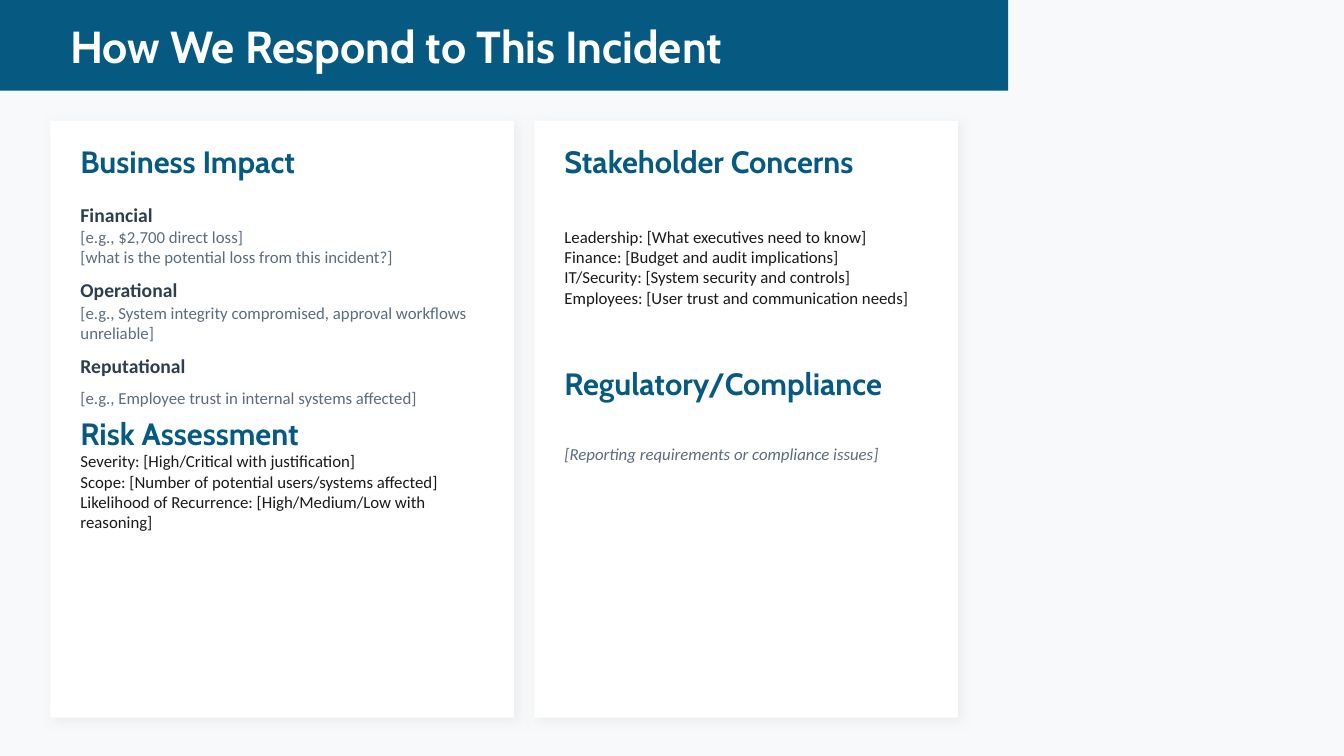
from lxml.etree import SubElement
from pptx import Presentation
from pptx.dml.color import RGBColor
from pptx.enum.shapes import MSO_SHAPE as Shape
from pptx.enum.text import MSO_ANCHOR as Anchor
from pptx.oxml.ns import qn
from pptx.util import Inches, Pt

TITLE = {"size": 32, "name": "Cabin", "bold": True, "color": "FFFFFF"}
HEADING = {"size": 22, "name": "Cabin", "bold": True, "color": "065A82"}
LABEL = {"size": 14, "name": "Calibri", "bold": True, "color": "2C3E50"}
HINT = {"size": 12, "name": "Calibri", "color": "5A6C7D"}
NOTE = HINT | {"italic": True}
BODY = HINT | {"color": "1A1A1A"}

CARD_TOP, CARD_HEIGHT, PADDING = 1.2, 5.92, 0.2
IMPACT_STEP = 0.75

IMPACTS = [
    ("Financial", ["[e.g., $2,700 direct loss]",
                   "[what is the potential loss from this incident?]"]),
    ("Operational", ["[e.g., System integrity compromised, approval workflows unreliable]"]),
    ("Reputational", ["[e.g., Employee trust in internal systems affected]"]),
]
RISKS = [
    "Severity: [High/Critical with justification]",
    "Scope: [Number of potential users/systems affected]",
    "Likelihood of Recurrence: [High/Medium/Low with reasoning]",
]
CONCERNS = [
    "Leadership: [What executives need to know]",
    "Finance: [Budget and audit implications]",
    "IT/Security: [System security and controls]",
    "Employees: [User trust and communication needs]",
]


def rgb(color):
    return RGBColor.from_string(color)


def add_panel(slide, left, top, width, height, color):
    panel = slide.shapes.add_shape(
        Shape.RECTANGLE, *map(Inches, (left, top, width, height)))
    panel.fill.solid()
    panel.fill.fore_color.rgb = rgb(color)
    panel.line.fill.background()
    panel.shadow.inherit = False
    return panel


def add_soft_shadow(panel):
    effects = panel._element.spPr.find(qn("a:effectLst"))
    shadow = SubElement(effects, qn("a:outerShdw"), blurRad=str(Pt(8)),
                        dist=str(Pt(3)), dir=str(45 * 60000),
                        algn="bl", rotWithShape="0")
    tint = SubElement(shadow, qn("a:srgbClr"), val="DDDDDD")
    SubElement(tint, qn("a:alpha"), val="50000")


def add_text(slide, left, top, width, height, lines, style):
    """Put one paragraph per line in a vertically centred box."""
    frame = slide.shapes.add_textbox(
        *map(Inches, (left, top, width, height))).text_frame
    frame.word_wrap = True
    frame.vertical_anchor = Anchor.MIDDLE
    frame.text = "\n".join(lines)
    for paragraph in frame.paragraphs:
        font = paragraph.runs[0].font
        for key, value in style.items():
            if key == "color":
                font.color.rgb = rgb(value)
            else:
                setattr(font, key, Pt(value) if key == "size" else value)


def add_header(slide, left, top, width, height):
    add_panel(slide, left, top, width, height, "065A82")
    add_text(slide, left + 0.6, top + 0.2, width - 1.2, 0.5,
             ["How We Respond to This Incident"], TITLE)


def add_card(slide, left, top, width, height, blocks):
    """Draw a card; each block is (offset, height, lines, style)."""
    add_soft_shadow(add_panel(slide, left, top, width, height, "FFFFFF"))
    for offset, block_height, lines, style in blocks:
        add_text(slide, left + PADDING, top + offset, width - 2 * PADDING,
                 block_height, lines, style)


def impact_blocks():
    blocks = [(0.2, 0.4, ["Business Impact"], HEADING)]
    for index, (label, hints) in enumerate(IMPACTS):
        offset = 0.8 + index * IMPACT_STEP
        blocks += [(offset, 0.25, [label], LABEL),
                   (offset + 0.25, 0.4, hints, HINT)]
    return blocks + [(2.95, 0.3, ["Risk Assessment"], HEADING),
                     (3.45, 0.45, RISKS, BODY)]


def stakeholder_blocks():
    return [
        (0.2, 0.4, ["Stakeholder Concerns"], HEADING),
        (0.75, 1.4, CONCERNS, BODY),
        (2.4, 0.4, ["Regulatory/Compliance"], HEADING),
        (2.85, 0.9, ["[Reporting requirements or compliance issues]"], NOTE),
    ]


def main():
    deck = Presentation()
    deck.slide_width, deck.slide_height = Inches(13.33), Inches(7.5)
    slide = deck.slides.add_slide(deck.slide_layouts[6])
    slide.background.fill.solid()
    slide.background.fill.fore_color.rgb = rgb("F8F9FA")
    add_header(slide, 0, 0, 10, 0.9)
    add_card(slide, 0.5, CARD_TOP, 4.6, CARD_HEIGHT, impact_blocks())
    add_card(slide, 5.3, CARD_TOP, 4.2, CARD_HEIGHT, stakeholder_blocks())
    deck.save("out.pptx")


if __name__ == "__main__":
    main()
